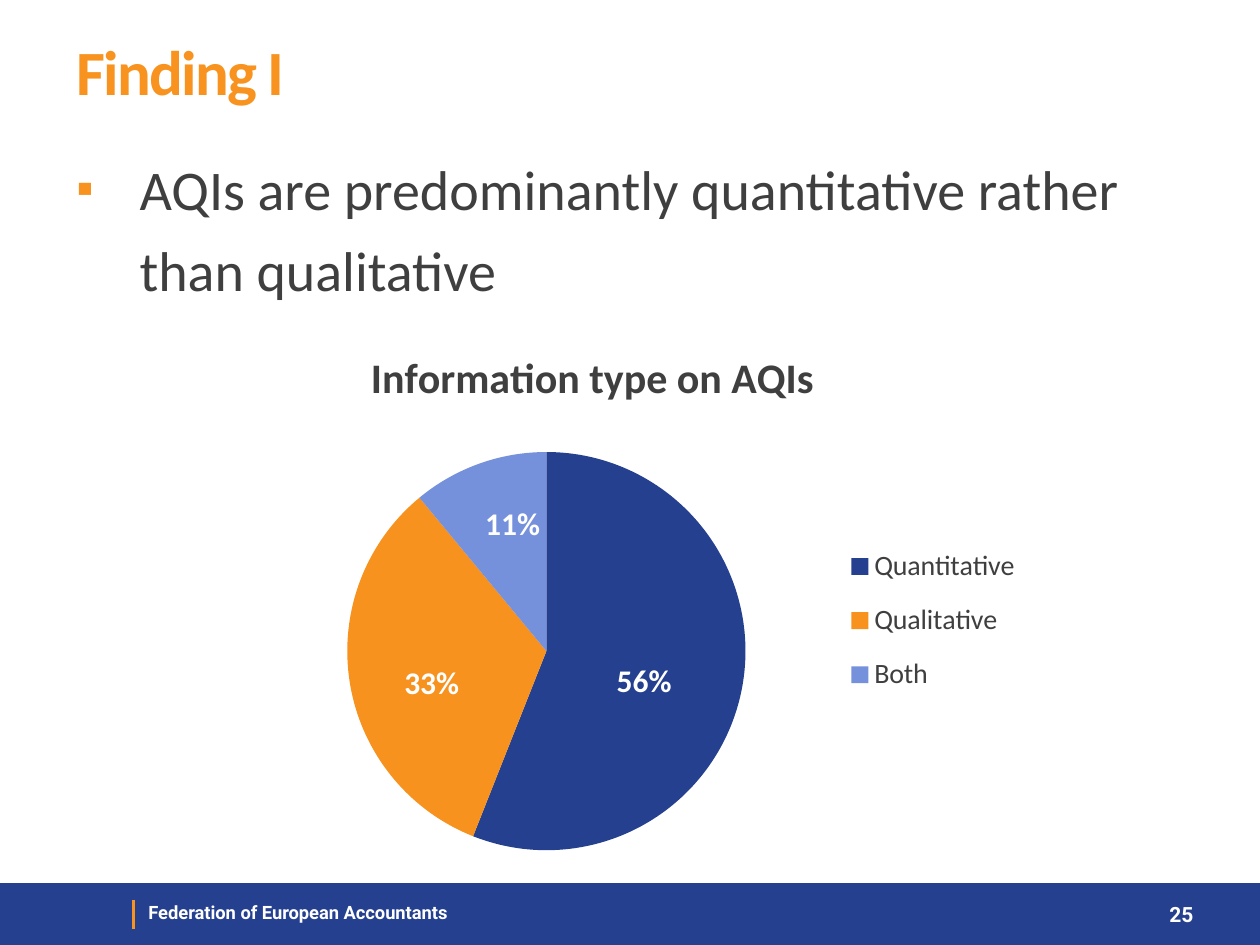
from typing import NamedTuple

from lxml.etree import SubElement
from pptx import Presentation
from pptx.chart.data import CategoryChartData
from pptx.dml.color import RGBColor
from pptx.enum.chart import XL_CHART_TYPE as ChartType
from pptx.enum.chart import XL_LABEL_POSITION as LabelPosition
from pptx.enum.chart import XL_LEGEND_POSITION as LegendPosition
from pptx.enum.shapes import MSO_CONNECTOR as Connector
from pptx.enum.shapes import MSO_SHAPE as Shape
from pptx.enum.text import MSO_ANCHOR as Anchor
from pptx.enum.text import PP_ALIGN as Align
from pptx.oxml import parse_xml
from pptx.oxml.ns import nsdecls, qn
from pptx.util import Inches, Pt

NAVY = RGBColor(0x24, 0x40, 0x8F)
ORANGE = RGBColor(0xF7, 0x93, 0x1E)
PIE_ORANGE = RGBColor(0xF7, 0x92, 0x1E)
LIGHT_BLUE = RGBColor(0x76, 0x91, 0xDC)
GREY = RGBColor(0x3F, 0x3F, 0x3F)
WHITE = RGBColor(0xFF, 0xFF, 0xFF)


class TextItem(NamedTuple):
    text: str
    box: tuple[float, float, float, float]
    font: dict
    anchor: Anchor = Anchor.TOP
    align: Align = Align.LEFT


class Slice(NamedTuple):
    name: str
    value: int
    color: RGBColor
    label_shift: tuple[float, float]


TITLE = TextItem("Finding I", (0.51, 0.02, 9, 1.08),
                 dict(name="Calibri", size=Pt(36), bold=True, color=ORANGE), Anchor.MIDDLE)
BODY = TextItem("AQIs are predominantly quantitative rather than qualitative",
                (0.51, 1.07, 9, 1.61), dict(name="Calibri", size=Pt(32), color=GREY))
FOOTER = TextItem("Federation of European Accountants", (1.08, 7.1, 3.7, 0.29),
                  dict(name="Roboto", size=Pt(10.5), bold=True, color=WHITE))
PAGE_NUMBER = TextItem("25", (8.94, 7.01, 0.63, 0.49),
                       dict(name="Roboto", size=Pt(12), bold=True, color=WHITE),
                       Anchor.MIDDLE, Align.RIGHT)
SLICES = [
    Slice("Quantitative", 56, NAVY, (0, 0.02)),
    Slice("Qualitative", 33, PIE_ORANGE, (-0.02, 0.03)),
    Slice("Both", 11, LIGHT_BLUE, (0, -0.06)),
]


def set_font(font, values: dict) -> None:
    for attribute, value in values.items():
        if attribute == "color":
            font.color.rgb = value
        else:
            setattr(font, attribute, value)


def add_text(slide, item: TextItem):
    """Add a text box and return its only paragraph."""
    frame = slide.shapes.add_textbox(*map(Inches, item.box)).text_frame
    frame.word_wrap = True
    frame.vertical_anchor = item.anchor
    paragraph = frame.paragraphs[0]
    paragraph.alignment = item.align
    run = paragraph.add_run()
    run.text = item.text
    set_font(run.font, item.font)
    return paragraph


def add_bullet(paragraph) -> None:
    paragraph.line_spacing = 1.2
    paragraph.space_after = Pt(18)
    properties = paragraph._p.get_or_add_pPr()
    properties.set("marL", str(Inches(0.5)))
    properties.set("indent", str(Inches(-0.5)))
    color = SubElement(properties, qn("a:buClr"))
    SubElement(color, qn("a:srgbClr"), val=str(ORANGE))
    SubElement(properties, qn("a:buSzPct"), val="85000")
    SubElement(properties, qn("a:buFont"), typeface="Calibri")
    SubElement(properties, qn("a:buChar"), char="▪")


def manual_layout(edge: bool = True, **values: float):
    """Build a chart layout from fractions of the chart's size."""
    modes = '<c:xMode val="edge"/><c:yMode val="edge"/>' if edge else ""
    numbers = "".join(f'<c:{key} val="{value}"/>' for key, value in values.items())
    return parse_xml(f'<c:layout {nsdecls("c")}><c:manualLayout>{modes}{numbers}'
                     "</c:manualLayout></c:layout>")


def place(element, layout, after: str = "") -> None:
    """Put a layout first in the element, or behind the named child."""
    for old in element.findall(qn("c:layout")):
        element.remove(old)
    if after:
        element.find(qn(after)).addnext(layout)
    else:
        element.insert(0, layout)


def add_footer(slide) -> None:
    band = slide.shapes.add_shape(Shape.RECTANGLE, *map(Inches, (0, 7.01, 10, 0.49)))
    band.shadow.inherit = False
    band.fill.solid()
    band.fill.fore_color.rgb = NAVY
    band.line.fill.background()
    add_text(slide, FOOTER)
    divider = slide.shapes.add_connector(Connector.STRAIGHT, *map(Inches, (1.06, 7.14, 1.06, 7.37)))
    divider.line.color.rgb = ORANGE
    divider.line.width = Pt(1.5)
    SubElement(divider._element.spPr, qn("a:effectLst"))
    add_text(slide, PAGE_NUMBER)


def add_pie(slide) -> None:
    data = CategoryChartData()
    data.categories = [item.name for item in SLICES]
    data.add_series("Series 1", [item.value for item in SLICES])
    chart = slide.shapes.add_chart(
        ChartType.PIE, *map(Inches, (1.85, 2.49, 6.46, 4.39)), data).chart
    set_font(chart.font, dict(name="Calibri", size=Pt(10), color=GREY))

    chart.has_title = True
    title = chart.chart_title
    title.text_frame.text = "Information type on AQIs"
    set_font(title.text_frame.paragraphs[0].runs[0].font,
             dict(name="Calibri", size=Pt(24), bold=True, color=GREY))
    place(title._element, manual_layout(x=0.16, y=0.05), "c:tx")

    chart.has_legend = True
    legend = chart.legend
    legend.position = LegendPosition.RIGHT
    legend.include_in_layout = False
    set_font(legend.font, dict(name="Calibri", size=Pt(16), color=GREY))
    place(legend._element, manual_layout(x=0.72, y=0.39, w=0.28, h=0.33), "c:legendPos")

    plot = chart.plots[0]
    plot.vary_by_categories = True
    place(chart._chartSpace.chart.plotArea,
          parse_xml(f'<c:layout {nsdecls("c")}><c:manualLayout><c:layoutTarget val="inner"/>'
                    '<c:xMode val="edge"/><c:yMode val="edge"/><c:x val="0.14"/><c:y val="0.25"/>'
                    '<c:w val="0.49"/><c:h val="0.72"/></c:manualLayout></c:layout>'))

    series = plot.series[0]
    label_font = dict(name="Calibri", size=Pt(18), bold=True, color=WHITE)
    labels = series.data_labels
    labels.show_percentage = True
    labels.show_value = False
    labels.position = LabelPosition.CENTER
    set_font(labels.font, label_font)
    for index, item in enumerate(SLICES):
        point = series.points[index]
        point.format.fill.solid()
        point.format.fill.fore_color.rgb = item.color
        label = point.data_label
        set_font(label.font, label_font)
        label.position = LabelPosition.CENTER
        element = labels._element.findall(qn("c:dLbl"))[index]
        element.find(qn("c:showVal")).set("val", "0")
        element.find(qn("c:showPercent")).set("val", "1")
        shift_x, shift_y = item.label_shift
        place(element, manual_layout(edge=False, x=shift_x, y=shift_y), "c:idx")


def main() -> None:
    presentation = Presentation()
    presentation.slide_width, presentation.slide_height = Inches(10), Inches(7.5)
    slide = presentation.slides.add_slide(presentation.slide_layouts[6])
    add_footer(slide)
    title = add_text(slide, TITLE)
    title.runs[0].font._element.set("spc", "-100")
    add_bullet(add_text(slide, BODY))
    add_pie(slide)
    presentation.save("out.pptx")


if __name__ == "__main__":
    main()
